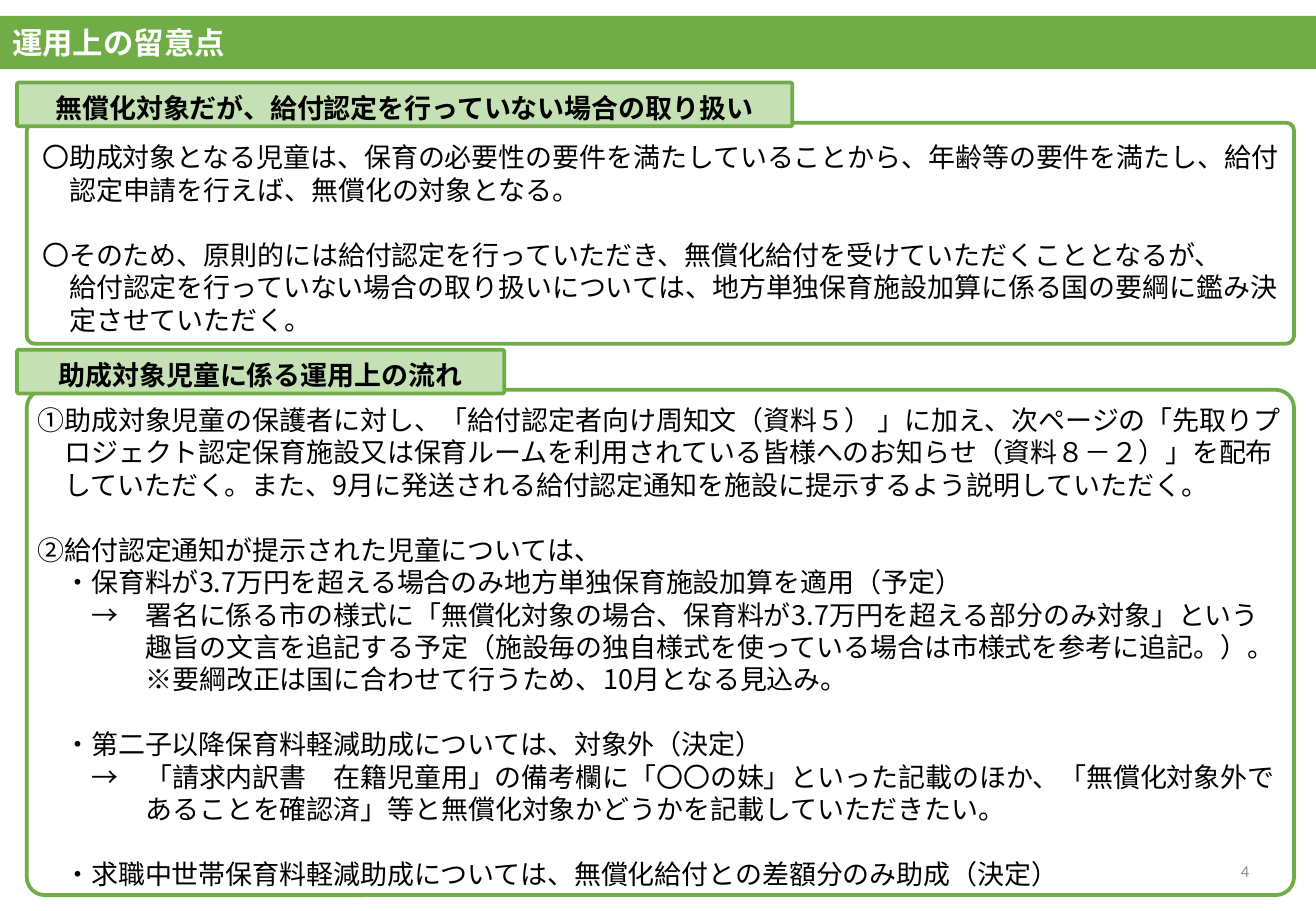
"""Build the slide on operational points for subsidised childcare."""
from dataclasses import dataclass

from lxml import etree
from pptx import Presentation
from pptx.dml.color import RGBColor
from pptx.enum.shapes import MSO_SHAPE
from pptx.enum.text import MSO_ANCHOR, MSO_AUTO_SIZE, PP_ALIGN
from pptx.oxml.ns import qn
from pptx.util import Emu, Pt

ROUNDED = MSO_SHAPE.ROUNDED_RECTANGLE
MIDDLE, TOP = MSO_ANCHOR.MIDDLE, MSO_ANCHOR.TOP
LEFT, CENTER, RIGHT = PP_ALIGN.LEFT, PP_ALIGN.CENTER, PP_ALIGN.RIGHT
NO_AUTOFIT = MSO_AUTO_SIZE.NONE

GREEN = RGBColor(0x70, 0xAD, 0x47)
PALE_GREEN = RGBColor(0xC5, 0xE0, 0xB4)
WHITE = RGBColor(0xFF, 0xFF, 0xFF)
BLACK = RGBColor(0x00, 0x00, 0x00)
GRAY = RGBColor(0x8C, 0x8C, 0x8C)

JAPANESE_FONT = "Noto Sans CJK JP"
NUMBER_FONT = "Calibri"
BODY_SIZE = 16
LINE_PITCH = Pt(19.25)
PX = 9144


@dataclass(frozen=True)
class Box:
    left: int
    top: int
    width: int
    height: int

    def emu(self) -> tuple[Emu, ...]:
        return tuple(Emu(v * PX) for v in (self.left, self.top, self.width, self.height))


@dataclass(frozen=True)
class Style:
    size: float = BODY_SIZE
    color: RGBColor = BLACK
    bold: bool = False
    font: str = JAPANESE_FONT
    align: PP_ALIGN = LEFT


@dataclass(frozen=True)
class Line:
    text: str
    indent: int = 0
    gap: bool = False


@dataclass(frozen=True)
class Section:
    heading: str
    heading_box: Box
    panel_box: Box
    text_box: Box
    lines: tuple[Line, ...]


TITLE_STYLE = Style(size=18, color=WHITE, bold=True)
HEADING_STYLE = Style(bold=True, align=CENTER)
BODY_STYLE = Style()
NUMBER_STYLE = Style(size=9.8, color=GRAY, font=NUMBER_FONT, align=RIGHT)

SECTIONS = (
    Section(
        "無償化対象だが、給付認定を行っていない場合の取り扱い",
        Box(14, 68, 638, 36), Box(22, 101, 1043, 182), Box(25, 111, 1054, 172),
        (
            Line("〇助成対象となる児童は、保育の必要性の要件を満たしていることから、年齢等の要件を満たし、給付"),
            Line("認定申請を行えば、無償化の対象となる。", 1),
            Line("〇そのため、原則的には給付認定を行っていただき、無償化給付を受けていただくこととなるが、", gap=True),
            Line("給付認定を行っていない場合の取り扱いについては、地方単独保育施設加算に係る国の要綱に鑑み決", 1),
            Line("定させていただく。", 1),
        ),
    ),
    Section(
        "助成対象児童に係る運用上の流れ",
        Box(14, 288, 401, 36), Box(22, 321, 1043, 416), Box(21, 327, 1054, 414),
        (
            Line("①助成対象児童の保護者に対し、「給付認定者向け周知文（資料５） 」に加え、次ページの「先取りプ"),
            Line("ロジェクト認定保育施設又は保育ルームを利用されている皆様へのお知らせ（資料８－２）」を配布", 1),
            Line("していただく。また、9月に発送される給付認定通知を施設に提示するよう説明していただく。", 1),
            Line("②給付認定通知が提示された児童については、", gap=True),
            Line("・保育料が3.7万円を超える場合のみ地方単独保育施設加算を適用（予定）", 1),
            Line("→　署名に係る市の様式に「無償化対象の場合、保育料が3.7万円を超える部分のみ対象」という", 2),
            Line("趣旨の文言を追記する予定（施設毎の独自様式を使っている場合は市様式を参考に追記。）。", 4),
            Line("※要綱改正は国に合わせて行うため、10月となる見込み。", 4),
            Line("・第二子以降保育料軽減助成については、対象外（決定）", 1, True),
            Line("→　「請求内訳書　在籍児童用」の備考欄に「〇〇の妹」といった記載のほか、「無償化対象外で", 2),
            Line("あることを確認済」等と無償化対象かどうかを記載していただきたい。", 4),
            Line("・求職中世帯保育料軽減助成については、無償化給付との差額分のみ助成（決定）", 1, True),
        ),
    ),
)


def set_frame(frame, anchor: MSO_ANCHOR, top: int = 5, bottom: int = 5) -> None:
    frame.word_wrap = True
    frame.auto_size = NO_AUTOFIT
    frame.vertical_anchor = anchor
    frame.margin_left = frame.margin_right = Emu(10 * PX)
    frame.margin_top, frame.margin_bottom = Emu(top * PX), Emu(bottom * PX)


def add_span(para, text: str, style: Style) -> None:
    para.alignment = style.align
    span = para.add_run()
    span.text = text
    span.font.size = Pt(style.size)
    span.font.bold = style.bold
    span.font.color.rgb = style.color
    span.font.name = style.font
    east_asian = etree.SubElement(span.font._element, qn("a:ea"))
    east_asian.set("typeface", style.font)


def add_rounded(page, box: Box, corner: float):
    shape = page.shapes.add_shape(ROUNDED, *box.emu())
    shape.shadow.inherit = False
    shape.adjustments[0] = corner
    shape.line.color.rgb = GREEN
    shape.line.width = Pt(2.25)
    return shape


def add_lines(page, box: Box, lines: tuple[Line, ...]) -> None:
    frame = page.shapes.add_textbox(*box.emu()).text_frame
    set_frame(frame, TOP)
    for index, line in enumerate(lines):
        para = frame.add_paragraph() if index else frame.paragraphs[0]
        para.line_spacing = LINE_PITCH
        if line.gap:
            para.space_before = LINE_PITCH
        para._p.get_or_add_pPr().set("marL", str(Pt(BODY_SIZE * line.indent)))
        add_span(para, line.text, BODY_STYLE)


def add_section(page, section: Section) -> None:
    panel = add_rounded(page, section.panel_box, 0.036)
    panel.fill.background()
    heading = add_rounded(page, section.heading_box, 0.042)
    heading.fill.solid()
    heading.fill.fore_color.rgb = PALE_GREEN
    set_frame(heading.text_frame, MIDDLE, top=10)
    add_span(heading.text_frame.paragraphs[0], section.heading, HEADING_STYLE)
    add_lines(page, section.text_box, section.lines)


def add_title(page, box: Box, text: str) -> None:
    title = page.shapes.title
    title.left, title.top, title.width, title.height = box.emu()
    title.fill.solid()
    title.fill.fore_color.rgb = GREEN
    set_frame(title.text_frame, MIDDLE)
    add_span(title.text_frame.paragraphs[0], text, TITLE_STYLE)


def add_page_number(page, box: Box, text: str) -> None:
    frame = page.shapes.add_textbox(*box.emu()).text_frame
    set_frame(frame, MIDDLE)
    add_span(frame.paragraphs[0], text, NUMBER_STYLE)


def main() -> None:
    deck = Presentation()
    deck.slide_width, deck.slide_height = Emu(1083 * PX), Emu(750 * PX)
    page = deck.slides.add_slide(deck.slide_layouts.get_by_name("Title Only"))
    add_title(page, Box(0, 13, 1083, 44), "運用上の留意点")
    for section in SECTIONS:
        add_section(page, section)
    add_page_number(page, Box(794, 697, 244, 40), "4")
    deck.save("out.pptx")


if __name__ == "__main__":
    main()
